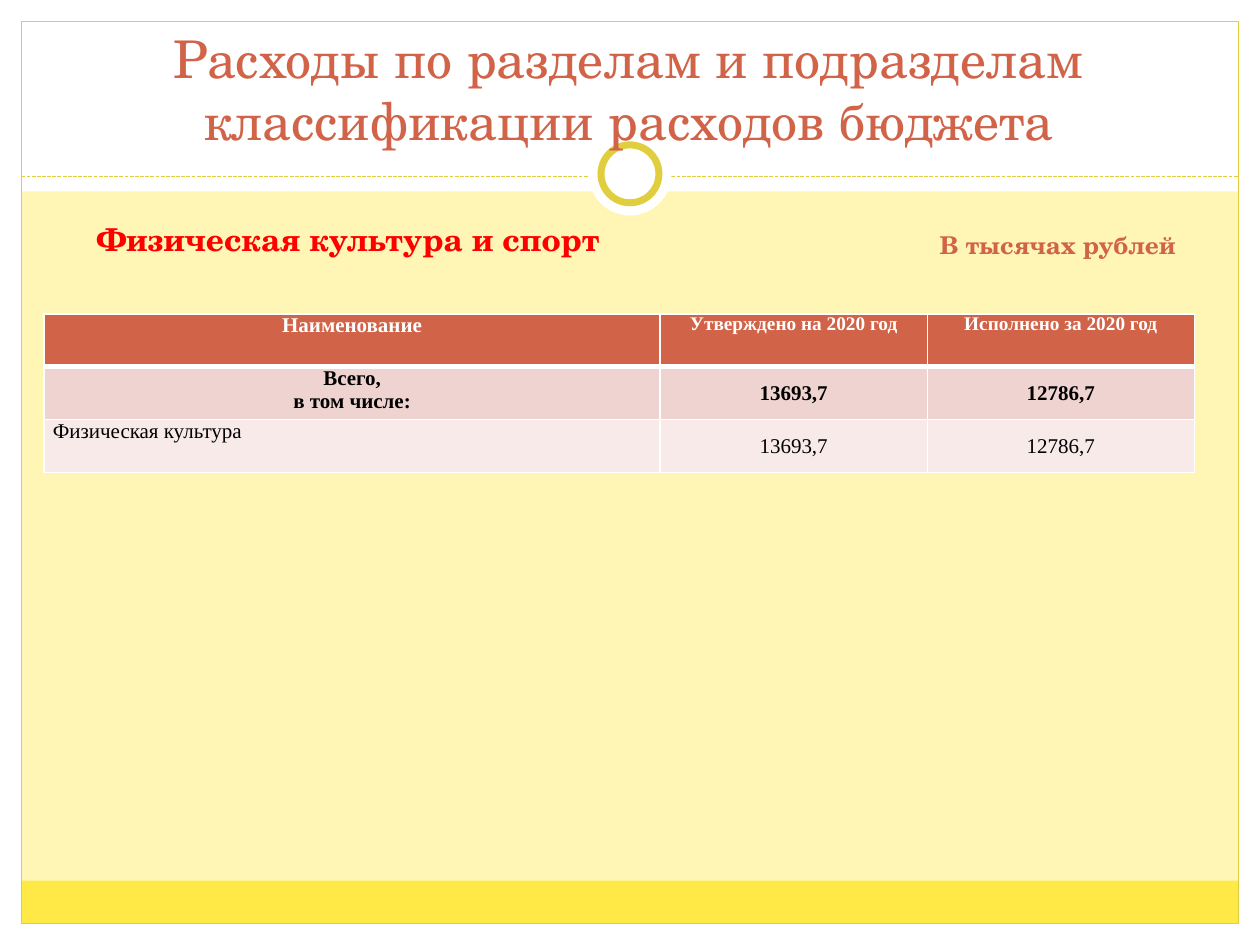
import lxml.etree
import pptx
import pptx.dml.color
import pptx.enum.dml
import pptx.enum.shapes
import pptx.enum.text
import pptx.oxml
import pptx.oxml.ns
import pptx.util

PX = 9144  # EMU per px, 100 px to the inch
SLIDE = (0, 0, 1000, 750)
HEADING_FONT = "TeX Gyre Schola"
TABLE_FONT = "Times New Roman"
COLOURS = {
    "background": "FFF6B5", "white": "FFFFFF", "band": "FFE947",
    "gold": "E1CE3F", "rust": "D16349", "red": "FF0000", "black": "000000",
    "total": "EED3D0", "detail": "F7EAE9",
}
SHAPES = pptx.enum.shapes.MSO_SHAPE
ALIGN = pptx.enum.text.PP_ALIGN
ANCHOR = pptx.enum.text.MSO_ANCHOR
AUTO_SIZE = pptx.enum.text.MSO_AUTO_SIZE


def emu(*lengths):
    return [pptx.util.Emu(length * PX) for length in lengths]


def colour(name):
    return pptx.dml.color.RGBColor.from_string(COLOURS[name])


def add_run(paragraph, text, font, size, name, bold=False):
    run = paragraph.add_run()
    run.text = text
    run.font.name = font
    run.font.size = pptx.util.Pt(size)
    run.font.bold = bold
    run.font.color.rgb = colour(name)


def add_shape(slide, kind, box, fill=None, line=None, width=0.75):
    shape = slide.shapes.add_shape(kind, *emu(*box))
    shape.shadow.inherit = False
    if fill:
        shape.fill.solid()
        shape.fill.fore_color.rgb = colour(fill)
    else:
        shape.fill.background()
    if line:
        shape.line.color.rgb = colour(line)
        shape.line.width = pptx.util.Pt(width)
    else:
        shape.line.fill.background()


def add_frame(slide, box):
    left, top, width, height = box
    right, bottom, margin = left + width, top + height, 17
    inner_width = width - 2 * margin

    # White margins, with a deep one behind the title
    for strip in (
        (left, bottom - margin, width, margin),
        (left, top, width, 152),
        (left, top, margin, height),
        (right - margin, top, margin, height),
    ):
        add_shape(slide, SHAPES.RECTANGLE, strip, "white")

    # Bottom band and outline
    add_shape(slide, SHAPES.RECTANGLE,
              (left + margin, bottom - margin - 34, inner_width, 34), "band")
    add_shape(slide, SHAPES.RECTANGLE,
              (left + margin, top + margin, inner_width, height - 2 * margin),
              line="gold")

    # Dashed divider
    divider = slide.shapes.add_connector(
        pptx.enum.shapes.MSO_CONNECTOR.STRAIGHT,
        *emu(left + margin, top + 140, right - margin, top + 140))
    divider.line.color.rgb = colour("gold")
    divider.line.width = pptx.util.Pt(0.75)
    divider.line.dash_style = pptx.enum.dml.MSO_LINE.SQUARE_DOT
    lxml.etree.SubElement(divider._element.spPr, pptx.oxml.ns.qn("a:effectLst"))

    # Ring on the divider
    centre_x, centre_y = left + width // 2, top + 138
    for radius, line in ((33, None), (23, "gold")):
        add_shape(slide, SHAPES.OVAL,
                  (centre_x - radius, centre_y - radius, 2 * radius, 2 * radius),
                  "white", line, 4)


def add_label(slide, box, text, size, name, wrap=True):
    label = slide.shapes.add_textbox(*emu(*box))
    frame = label.text_frame
    frame.word_wrap = wrap
    frame.auto_size = AUTO_SIZE.NONE if wrap else AUTO_SIZE.SHAPE_TO_FIT_TEXT
    add_run(frame.paragraphs[0], text, HEADING_FONT, size, name, bold=True)


def set_borders(cell, bottom_width):
    properties = cell._tc.get_or_add_tcPr()
    widths = {"lnL": 1, "lnR": 1, "lnT": 1, "lnB": bottom_width}
    for position, (side, width) in enumerate(widths.items()):
        properties.insert(position, pptx.oxml.parse_xml(
            f'<a:{side} {pptx.oxml.ns.nsdecls("a")} w="{pptx.util.Pt(width)}">'
            f'<a:solidFill><a:srgbClr val="{COLOURS["white"]}"/></a:solidFill>'
            f'</a:{side}>'))


def add_budget_table(slide, box):
    # Each row: fill, text colour, bold, sizes of first and other columns, texts
    rows = (
        ("rust", "white", True, (12, 11),
         ("Наименование", "Утверждено на 2020 год", "Исполнено за 2020 год")),
        ("total", "black", True, (12, 12),
         ("Всего,\nв том числе:", "13693,7", "12786,7")),
        ("detail", "black", False, (12, 12),
         ("Физическая культура", "13693,7", "12786,7")),
    )
    table = slide.shapes.add_table(len(rows), 3, *emu(*box)).table
    table.horz_banding = False
    value_width = 212
    widths = (box[2] - 2 * value_width, value_width, value_width)
    for column, width in zip(table.columns, emu(*widths)):
        column.width = width

    for row_index, (fill, name, bold, sizes, texts) in enumerate(rows):
        table.rows[row_index].height = emu(box[3] // len(rows))[0]
        for column_index, text in enumerate(texts):
            cell = table.cell(row_index, column_index)
            cell.fill.solid()
            cell.fill.fore_color.rgb = colour(fill)
            set_borders(cell, 3 if row_index == 0 else 1)
            cell.margin_left, cell.margin_right = emu(7, 7)
            cell.margin_top = cell.margin_bottom = 0
            is_value = row_index > 0 and column_index > 0
            cell.vertical_anchor = ANCHOR.MIDDLE if is_value else ANCHOR.TOP
            is_item = row_index == 2 and column_index == 0
            frame = cell.text_frame
            for line_index, line in enumerate(text.split("\n")):
                paragraph = frame.add_paragraph() if line_index else frame.paragraphs[0]
                paragraph.alignment = ALIGN.LEFT if is_item else ALIGN.CENTER
                add_run(paragraph, line, TABLE_FONT,
                        sizes[min(column_index, 1)], name, bold)


def place_title(slide, box, text):
    title = slide.shapes.title
    title.left, title.top, title.width, title.height = emu(*box)
    frame = title.text_frame
    frame.word_wrap = True
    frame.auto_size = AUTO_SIZE.NONE
    frame.vertical_anchor = ANCHOR.BOTTOM
    paragraph = frame.paragraphs[0]
    paragraph.alignment = ALIGN.CENTER
    add_run(paragraph, text, HEADING_FONT, 29.7, "rust")
    # Bring the title in front of the ring
    slide.shapes._spTree.append(title._element)


def main():
    presentation = pptx.Presentation()
    presentation.slide_width, presentation.slide_height = emu(*SLIDE[2:])
    slide = presentation.slides.add_slide(presentation.slide_layouts[5])
    slide.background.fill.solid()
    slide.background.fill.fore_color.rgb = colour("background")

    add_frame(slide, SLIDE)
    add_label(slide, (736, 178, 227, 47), "В тысячах рублей", 14, "rust")
    add_label(slide, (67, 170, 422, 40), "Физическая культура и спорт", 18, "red",
              wrap=False)
    add_budget_table(slide, (35, 249, 913, 126))
    place_title(slide, (33, 42, 933, 83),
                "Расходы по разделам и подразделам классификации расходов бюджета")
    presentation.save("out.pptx")


if __name__ == "__main__":
    main()
